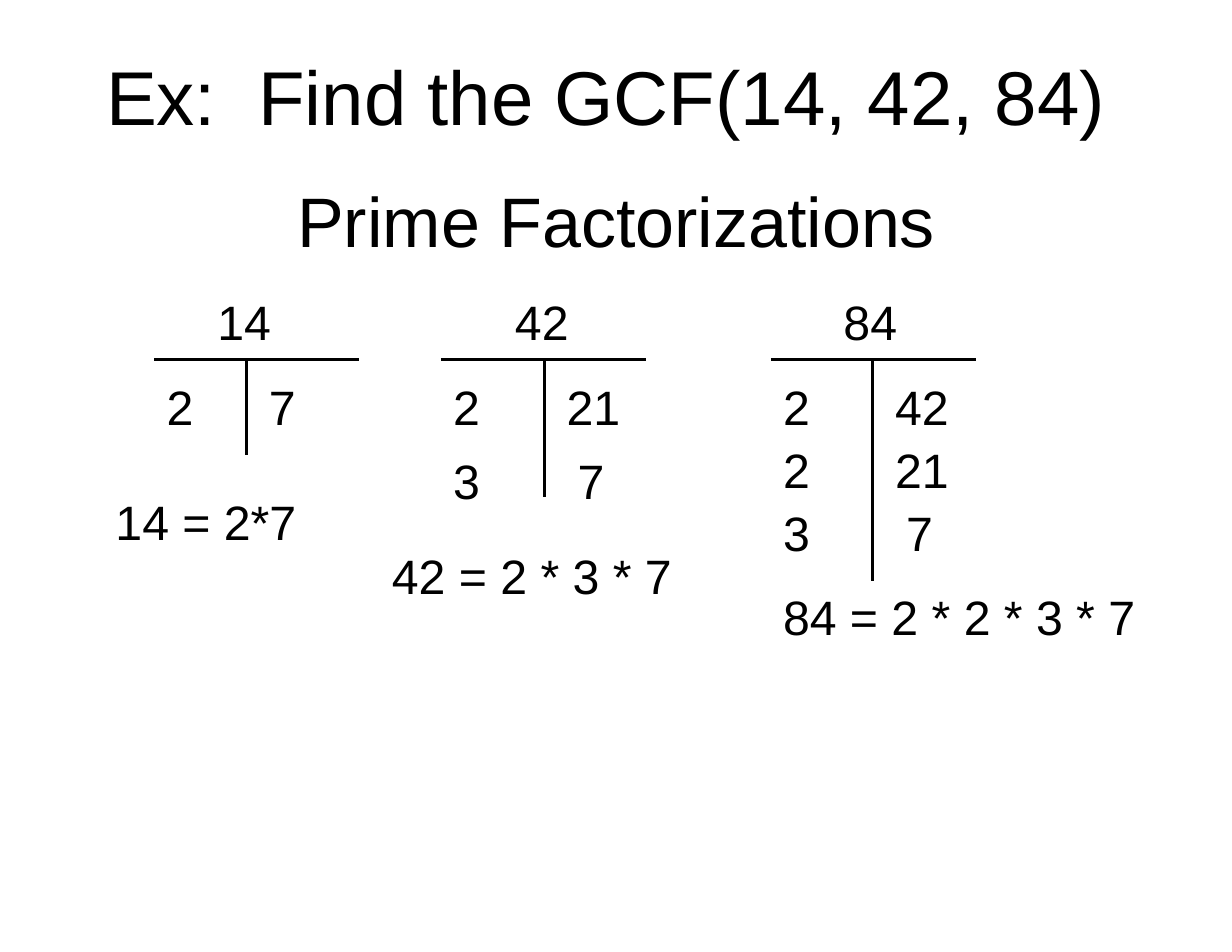
from dataclasses import dataclass

from pptx import Presentation
from pptx.dml.color import RGBColor
from pptx.enum.shapes import MSO_CONNECTOR
from pptx.enum.text import MSO_ANCHOR, MSO_AUTO_SIZE, PP_ALIGN
from pptx.oxml.ns import qn
from pptx.slide import Slide
from pptx.text.text import TextFrame, _Paragraph as Paragraph
from pptx.util import Cm, Pt
from lxml.etree import SubElement

BLACK = RGBColor(0x00, 0x00, 0x00)
FONT = "Arial"

# Shared layout, in centimetres
BAR_Y, BAR_WIDTH = 8.15, 4.65
NUMBER_Y, FIRST_STEP_Y = 6.48, 8.41
CELL_WIDTH, CELL_HEIGHT = 2.08, 1.63
NUMBER_OFFSET, QUOTIENT_OFFSET = -0.94, 0.23  # from the stem
DIGIT_INDENT = 0.25  # for a last quotient under two-digit ones


@dataclass(frozen=True)
class Factorization:
    number: int
    steps: tuple[tuple[int, int], ...]  # (prime, quotient)
    product: str
    left: float
    stem_x: float
    stem_bottom: float
    step_gap: float
    product_left: float
    product_top: float
    product_width: float


FACTORIZATIONS = (
    Factorization(14, ((2, 7),), "14 = 2*7",
                  3.5, 5.59, 10.31, 0, 2.34, 11.02, 5.13),
    Factorization(42, ((2, 21), (3, 7)), "42 = 2 * 3 * 7",
                  10, 12.34, 11.28, 1.68, 8.61, 12.24, 8.15),
    Factorization(84, ((2, 42), (2, 21), (3, 7)), "84 = 2 * 2 * 3 * 7",
                  17.48, 19.79, 13.18, 1.43, 17.48, 13.18, 9.32),
)


def add_run(paragraph: Paragraph, text: str, size: float) -> None:
    run = paragraph.add_run()
    run.text = text
    run.font.name = FONT
    run.font.size = Pt(size)
    run.font.color.rgb = BLACK


def set_insets(frame: TextFrame) -> None:
    frame.word_wrap = True
    frame.margin_left = frame.margin_right = Cm(0.28)
    frame.margin_top = frame.margin_bottom = Cm(0.15)


def add_label(slide: Slide, text: str, left: float, top: float,
              width: float = CELL_WIDTH) -> None:
    box = slide.shapes.add_textbox(Cm(left), Cm(top), Cm(width), Cm(CELL_HEIGHT))
    set_insets(box.text_frame)
    box.text_frame.auto_size = MSO_AUTO_SIZE.SHAPE_TO_FIT_TEXT
    add_run(box.text_frame.paragraphs[0], text, 31)


def add_line(slide: Slide, x1: float, y1: float, x2: float, y2: float) -> None:
    line = slide.shapes.add_connector(
        MSO_CONNECTOR.STRAIGHT, Cm(x1), Cm(y1), Cm(x2), Cm(y2))
    line.line.color.rgb = BLACK
    line.line.width = Pt(2)
    SubElement(line._element.spPr, qn("a:effectLst"))


def add_title(slide: Slide) -> None:
    title = slide.shapes.title
    title.left, title.top = Cm(1.4), Cm(0.86)
    title.width, title.height = Cm(25.15), Cm(4.9)
    frame = title.text_frame
    set_insets(frame)
    frame.margin_top = Cm(0.25)
    frame.auto_size = MSO_AUTO_SIZE.NONE
    frame.vertical_anchor = MSO_ANCHOR.TOP
    task = frame.paragraphs[0]
    add_run(task, "Ex:  Find the GCF(14, 42, 84) ", 49)
    method = frame.add_paragraph()
    method.space_before = Pt(24)
    add_run(method, "Prime Factorizations", 45)
    for paragraph in (task, method):
        paragraph.alignment = PP_ALIGN.CENTER


def add_factorization(slide: Slide, item: Factorization) -> None:
    # T-shaped frame
    add_line(slide, item.left, BAR_Y, item.left + BAR_WIDTH, BAR_Y)
    add_line(slide, item.stem_x, BAR_Y, item.stem_x, item.stem_bottom)
    add_label(slide, str(item.number), item.stem_x + NUMBER_OFFSET, NUMBER_Y)
    # Primes on the left, quotients on the right
    for row, (prime, quotient) in enumerate(item.steps):
        top = FIRST_STEP_Y + row * item.step_gap
        indent = DIGIT_INDENT if row and quotient < 10 else 0
        add_label(slide, str(prime), item.left, top)
        add_label(slide, str(quotient),
                  item.stem_x + QUOTIENT_OFFSET + indent, top)
    # Resulting product
    add_label(slide, item.product, item.product_left, item.product_top,
              item.product_width)


def main() -> None:
    deck = Presentation()
    deck.slide_width, deck.slide_height = Cm(27.94), Cm(21.59)
    slide = deck.slides.add_slide(deck.slide_layouts[5])
    add_title(slide)
    for item in FACTORIZATIONS:
        add_factorization(slide, item)
    deck.save("out.pptx")


if __name__ == "__main__":
    main()
